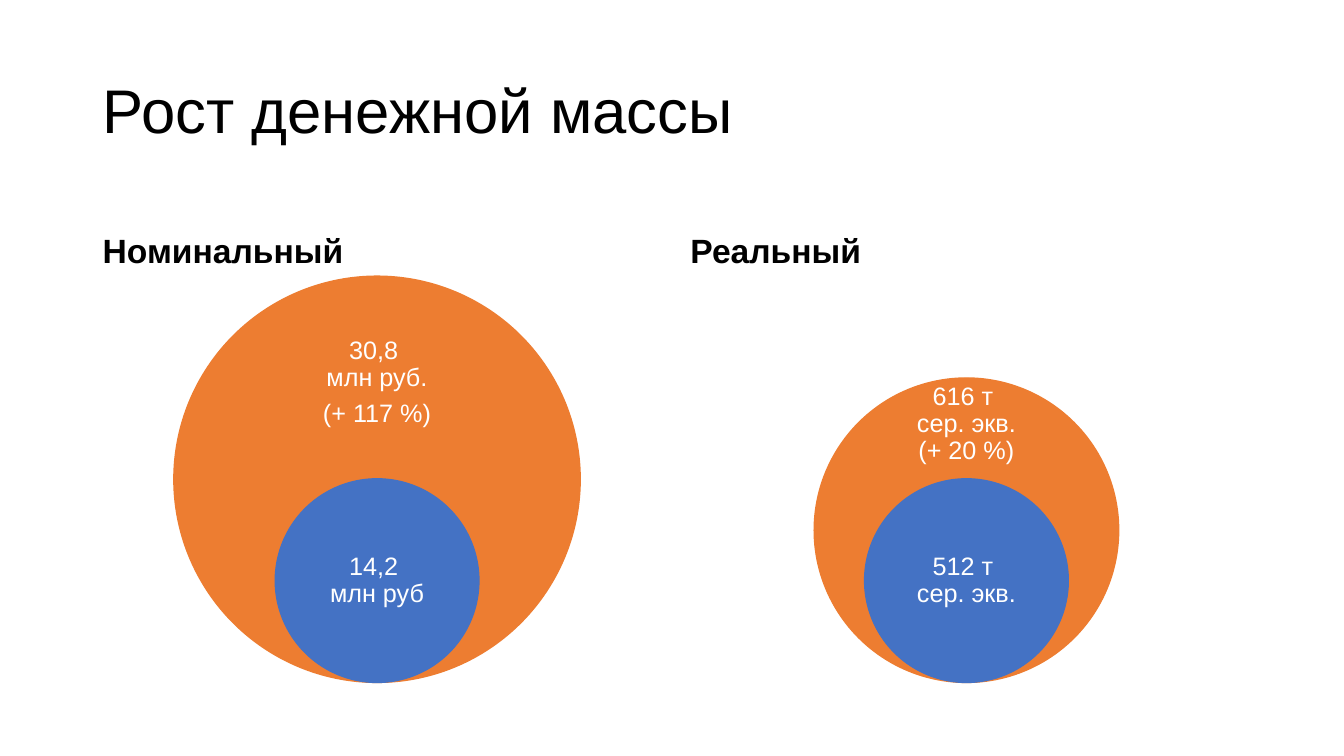
from pptx import Presentation
from pptx.dml.color import RGBColor
from pptx.enum.shapes import MSO_SHAPE
from pptx.enum.text import MSO_ANCHOR, PP_ALIGN
from pptx.util import Inches, Pt

BLACK = RGBColor(0x00, 0x00, 0x00)
WHITE = RGBColor(0xFF, 0xFF, 0xFF)
ORANGE = RGBColor(0xED, 0x7D, 0x31)
BLUE = RGBColor(0x44, 0x72, 0xC4)
FONT = "Arial"
HEADING_HEIGHT = 0.9


def write_text(shape, paragraphs, size=18, color=BLACK, bold=False,
               align=PP_ALIGN.LEFT, anchor=MSO_ANCHOR.MIDDLE, space_after=0):
    """Fill a shape with formatted paragraphs."""
    frame = shape.text_frame
    frame.word_wrap = True
    frame.vertical_anchor = anchor
    for index, text in enumerate(paragraphs):
        paragraph = frame.add_paragraph() if index else frame.paragraphs[0]
        paragraph.text = text
        paragraph.alignment = align
        paragraph.line_spacing = 0.9
        paragraph.space_after = Pt(space_after)
        for run in paragraph.runs:
            run.font.name = FONT
            run.font.size = Pt(size)
            run.font.bold = bold
            run.font.color.rgb = color


def add_text(slide, box, text, **text_format):
    """Add a text box holding one paragraph."""
    shape = slide.shapes.add_textbox(*map(Inches, box))
    write_text(shape, [text], **text_format)


def add_circle(slide, center, bottom, diameter, color, paragraphs, lift=0):
    """Add a circle standing on a baseline, its label raised by lift."""
    shape = slide.shapes.add_shape(
        MSO_SHAPE.OVAL, Inches(center - diameter / 2), Inches(bottom - diameter),
        Inches(diameter), Inches(diameter))
    shape.shadow.inherit = False
    shape.fill.solid()
    shape.fill.fore_color.rgb = color
    shape.line.color.rgb = color
    shape.line.width = Pt(1)
    frame = shape.text_frame
    frame.margin_left = frame.margin_right = frame.margin_top = 0
    frame.margin_bottom = Inches(2 * lift)
    write_text(shape, paragraphs, color=WHITE, align=PP_ALIGN.CENTER, space_after=6.3)


def add_growth_panel(slide, box, heading, diameter, after, lift, before):
    """Add a heading above two nested circles, later value around earlier one."""
    left, top, width, height = box
    add_text(slide, (left, top, width, HEADING_HEIGHT), heading,
             size=24, bold=True, anchor=MSO_ANCHOR.BOTTOM)
    center, bottom = left + width / 2, top + height
    add_circle(slide, center, bottom, diameter, ORANGE, after, lift)
    add_circle(slide, center, bottom, 2.02, BLUE, before)


def main():
    """Build the slide and save it."""
    presentation = Presentation()
    presentation.slide_width = Inches(13.33)
    presentation.slide_height = Inches(7.5)
    slide = presentation.slides.add_slide(presentation.slide_layouts[6])
    add_text(slide, (0.92, 0.4, 11.5, 1.45), "Рост денежной массы", size=44)
    add_growth_panel(slide, (0.92, 1.84, 5.64, 4.93), "Номинальный", 4.03,
                     ["30,8 \nмлн руб.", "(+ 117 %)"], 0.96, ["14,2 \nмлн руб"])
    add_growth_panel(slide, (6.75, 1.84, 5.67, 4.93), "Реальный", 3.02,
                     ["616 т \nсер. экв.\n(+ 20 %)"], 1.05, ["512 т \nсер. экв."])
    presentation.save("out.pptx")


if __name__ == "__main__":
    main()
